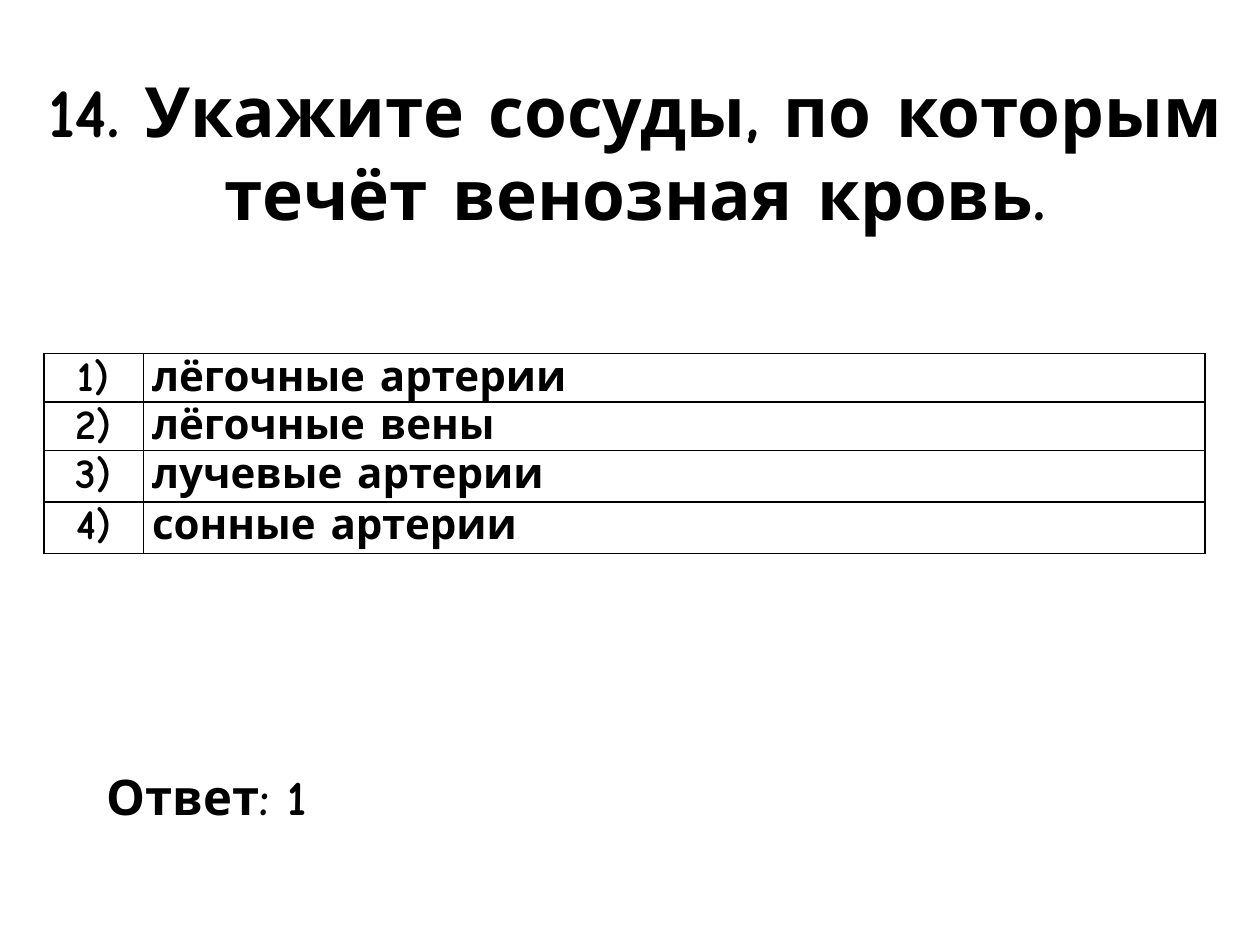
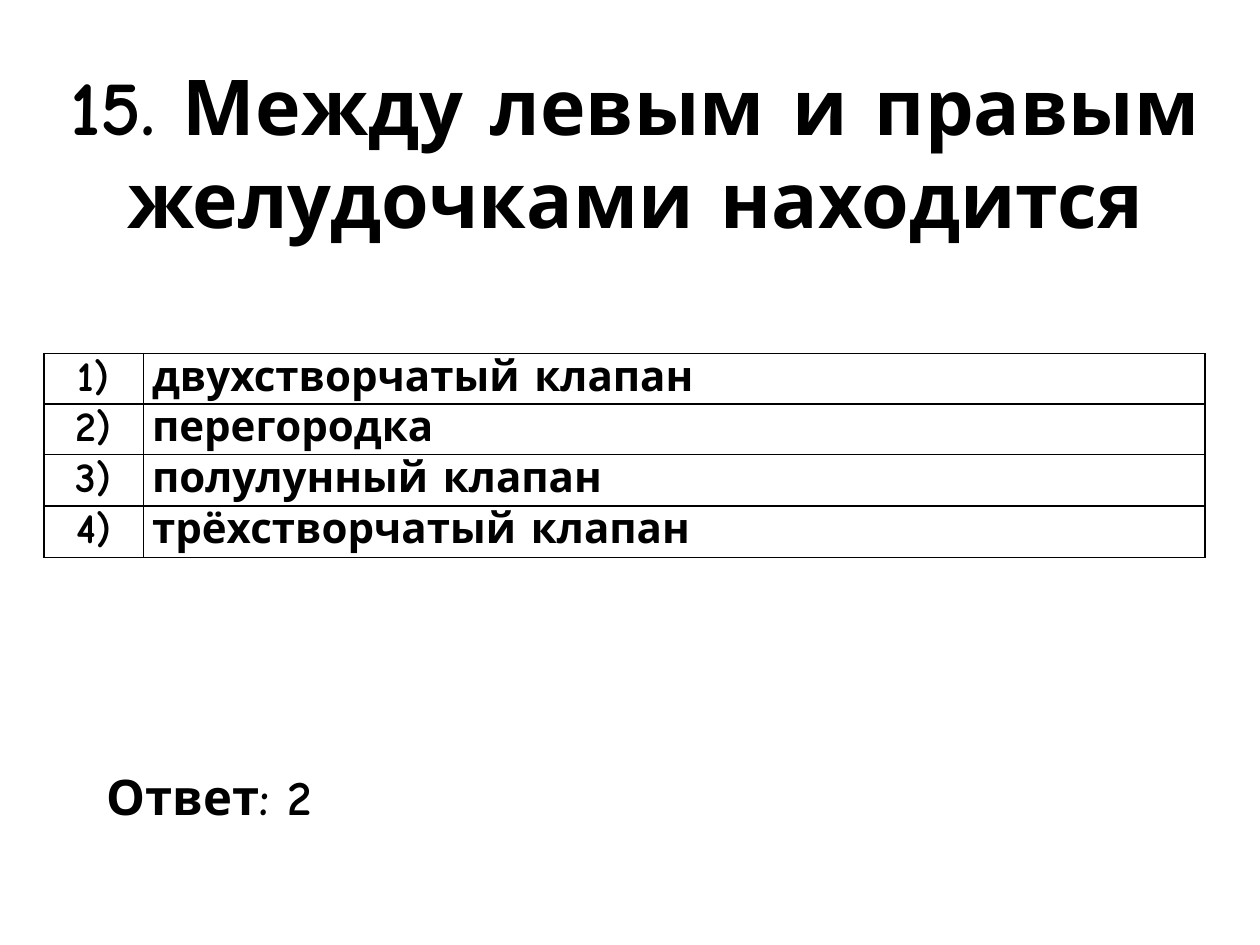
import pptx
import pptx.dml.color
import pptx.enum.text
import pptx.oxml
import pptx.oxml.ns
import pptx.util

Pt = pptx.util.Pt
Align = pptx.enum.text.PP_ALIGN
Anchor = pptx.enum.text.MSO_ANCHOR
Fit = pptx.enum.text.MSO_AUTO_SIZE

INK = "000000"
FACE = "Comic Neue"
COLS = (56.7, 606.8)
ROWS = (27.7, 27.7, 29.4, 29.4)

TESTS = (
    ("14. Укажите сосуды, по которым течёт венозная кровь.", 39.6,
     ("лёгочные артерии", "лёгочные вены", "лучевые артерии", "сонные артерии"), 1),
    ("15. Между левым и правым желудочками находится", 44,
     ("двухстворчатый клапан", "перегородка", "полулунный клапан", "трёхстворчатый клапан"), 2),
)


def tint(code):
    return pptx.dml.color.RGBColor.from_string(code)


class Quiz:
    """Build quiz slides in one shared style."""

    def __init__(self):
        self.deck = pptx.Presentation()
        self.deck.slide_width, self.deck.slide_height = Pt(720), Pt(540)
        self.slide = None

    def page(self):
        self.slide = self.deck.slides.add_slide(self.deck.slide_layouts[6])

    def line(self, frame, text, size, align):
        para = frame.paragraphs[0]
        para.text = text
        para.alignment = align
        font = para.font
        font.name, font.size, font.bold = FACE, Pt(size), True
        font.color.rgb = tint(INK)

    def label(self, box, text, size, align, anchor=Anchor.TOP, fit=Fit.NONE):
        frame = self.slide.shapes.add_textbox(*map(Pt, box)).text_frame
        frame.word_wrap = True
        frame.auto_size = fit
        frame.vertical_anchor = anchor
        self.line(frame, text, size, align)

    def edge(self, cell):
        props = cell._tc.get_or_add_tcPr()
        space = pptx.oxml.ns.nsdecls("a")
        for side in "LRTB":
            props.append(pptx.oxml.parse_xml(
                f'<a:ln{side} {space} w="{Pt(1)}"><a:solidFill>'
                f'<a:srgbClr val="{INK}"/></a:solidFill></a:ln{side}>'))

    def cell(self, cell, text, align, inset):
        cell.margin_left = cell.margin_right = Pt(inset)
        cell.margin_top = cell.margin_bottom = 0
        self.edge(cell)
        cell.fill.background()
        self.line(cell.text_frame, text, 24, align)

    def grid(self, picks):
        size = map(Pt, (25.2, 202, sum(COLS), sum(ROWS)))
        table = self.slide.shapes.add_table(len(ROWS), len(COLS), *size).table
        table.first_row = table.horz_banding = False
        for col, width in zip(table.columns, COLS):
            col.width = Pt(width)
        for num, (row, height, pick) in enumerate(zip(table.rows, ROWS, picks), 1):
            row.height = Pt(height)
            self.cell(row.cells[0], f"{num})", Align.CENTER, 6.5)
            self.cell(row.cells[1], pick, Align.JUSTIFY, 5)


def main():
    quiz = Quiz()
    for title, size, picks, key in TESTS:
        quiz.page()
        quiz.label((20, 21.6, 686.2, 129.6), title, size, Align.CENTER, Anchor.MIDDLE)
        quiz.grid(picks)
        quiz.label((54, 434.2, 203.8, 41), f"Ответ: {key}", 28, Align.JUSTIFY,
                   fit=Fit.SHAPE_TO_FIT_TEXT)
    quiz.deck.save("out.pptx")


if __name__ == "__main__":
    main()
